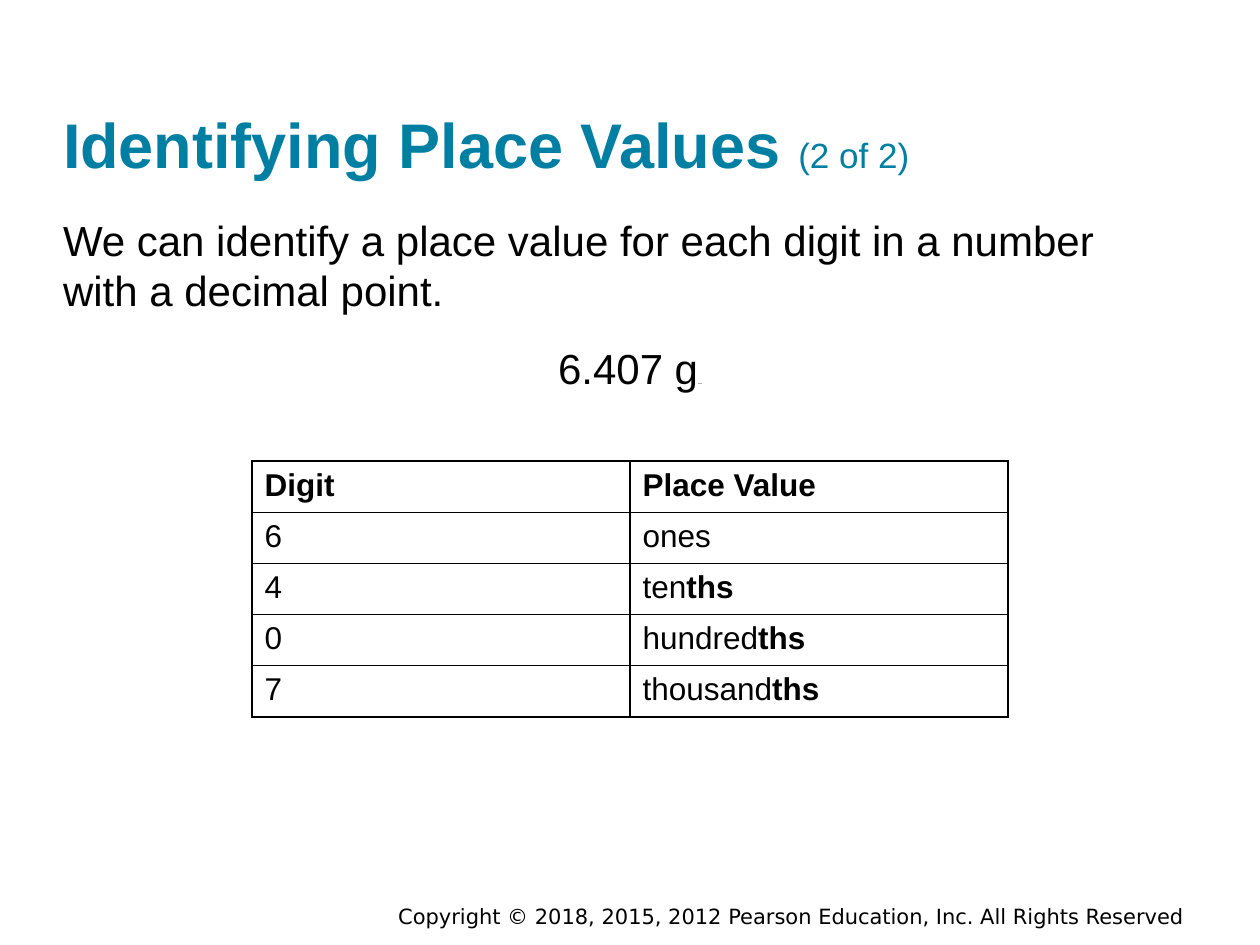
from lxml.etree import SubElement
from pptx import Presentation
from pptx.dml.color import RGBColor
from pptx.enum.text import MSO_ANCHOR, MSO_AUTO_SIZE, PP_ALIGN
from pptx.oxml.ns import qn
from pptx.util import Inches, Pt

WIDTH, HEIGHT = Inches(10), Inches(7.5)
BLACK, TEAL, WHITE = "000000", "007FA3", "FFFFFF"
PLACE_VALUES = [
    ("6", "ones", ""),
    ("4", "ten", "ths"),
    ("0", "hundred", "ths"),
    ("7", "thousand", "ths"),
]


def color(hex_string):
    """Turn a hex string into a colour."""
    return RGBColor.from_string(hex_string)


def area(left, top, width, height):
    """Turn inches on the slide grid into a box of lengths."""
    return tuple(Inches(value) for value in (left, top, width, height))


def place(shape, box):
    """Move a shape into a box."""
    shape.left, shape.top, shape.width, shape.height = box


def write(para, spans, hex_string=BLACK, name="Arial"):
    """Fill a paragraph with spans of text, size and weight."""
    for text, size, bold in spans:
        span = para.add_run()
        span.text = text
        span.font.name = name
        span.font.size = Pt(size)
        span.font.bold = bold
        span.font.color.rgb = color(hex_string)


def fill_placeholder(holder, box, spans, hex_string=BLACK,
                     align=PP_ALIGN.LEFT, anchor=MSO_ANCHOR.TOP):
    """Place a placeholder and give it one paragraph without a bullet."""
    place(holder, box)
    frame = holder.text_frame
    frame.auto_size = MSO_AUTO_SIZE.NONE
    frame.word_wrap = True
    frame.vertical_anchor = anchor
    frame.margin_left = frame.margin_right = 0
    frame.margin_top = frame.margin_bottom = 0
    para = frame.paragraphs[0]
    properties = para._p.get_or_add_pPr()
    properties.set("marL", "0")
    properties.set("indent", "0")
    SubElement(properties, qn("a:buNone"))
    para.alignment = align
    para.space_before = Pt(0)
    write(para, spans, hex_string)


def add_border(cell):
    """Draw a thin black line on every side of a cell."""
    properties = cell._tc.get_or_add_tcPr()
    for position, side in enumerate(("a:lnL", "a:lnR", "a:lnT", "a:lnB")):
        line = SubElement(properties, qn(side), w=str(Pt(1)))
        fill = SubElement(line, qn("a:solidFill"))
        SubElement(fill, qn("a:srgbClr"), val=BLACK)
        properties.insert(position, line)


def add_place_values(page, box):
    """Add the table of digits and their place values."""
    rows = [[[("Digit", 18, True)], [("Place Value", 18, True)]]]
    for digit, stem, ending in PLACE_VALUES:
        value = [(stem, 18, False)]
        if ending:
            value.append((ending, 18, True))
        rows.append([[(digit, 18, False)], value])
    table = page.shapes.add_table(len(rows), 2, *box).table
    for row, contents in enumerate(rows):
        for column, spans in enumerate(contents):
            cell = table.cell(row, column)
            cell.fill.solid()
            cell.fill.fore_color.rgb = color(WHITE)
            add_border(cell)
            write(cell.text_frame.paragraphs[0], spans)


def add_copyright(page, box):
    """Add the copyright line at the foot of the slide."""
    frame = page.shapes.add_textbox(*box).text_frame
    frame.word_wrap = True
    frame.vertical_anchor = MSO_ANCHOR.MIDDLE
    para = frame.paragraphs[0]
    para.alignment = PP_ALIGN.RIGHT
    notice = "Copyright © 2018, 2015, 2012 Pearson Education, Inc. All Rights Reserved"
    write(para, [(notice, 12, False)], name="DejaVu Sans")


def main():
    """Build and save the slide."""
    deck = Presentation()
    deck.slide_width, deck.slide_height = WIDTH, HEIGHT
    page = deck.slides.add_slide(deck.slide_layouts.get_by_name("Two Content"))
    title, statement, example = page.placeholders
    fill_placeholder(
        title, area(0.5, 0.24, 9, 1.2),
        [("Identifying Place Values ", 36, True), ("(2 of 2)", 20, False)],
        TEAL, anchor=MSO_ANCHOR.BOTTOM)
    sentence = "We can identify a place value for each digit in a number with a decimal point."
    fill_placeholder(statement, area(0.5, 1.7, 8.82, 0.92), [(sentence, 24, False)])
    fill_placeholder(
        example, area(0.5, 2.72, 9, 0.45),
        [("6.407 g", 24, False), ("rams", 1, False)], align=PP_ALIGN.CENTER)
    add_place_values(page, area(2, 3.66, 6, 2.03))
    add_copyright(page, area(2.9, 7.04, 6.6, 0.46))
    deck.save("out.pptx")


if __name__ == "__main__":
    main()
